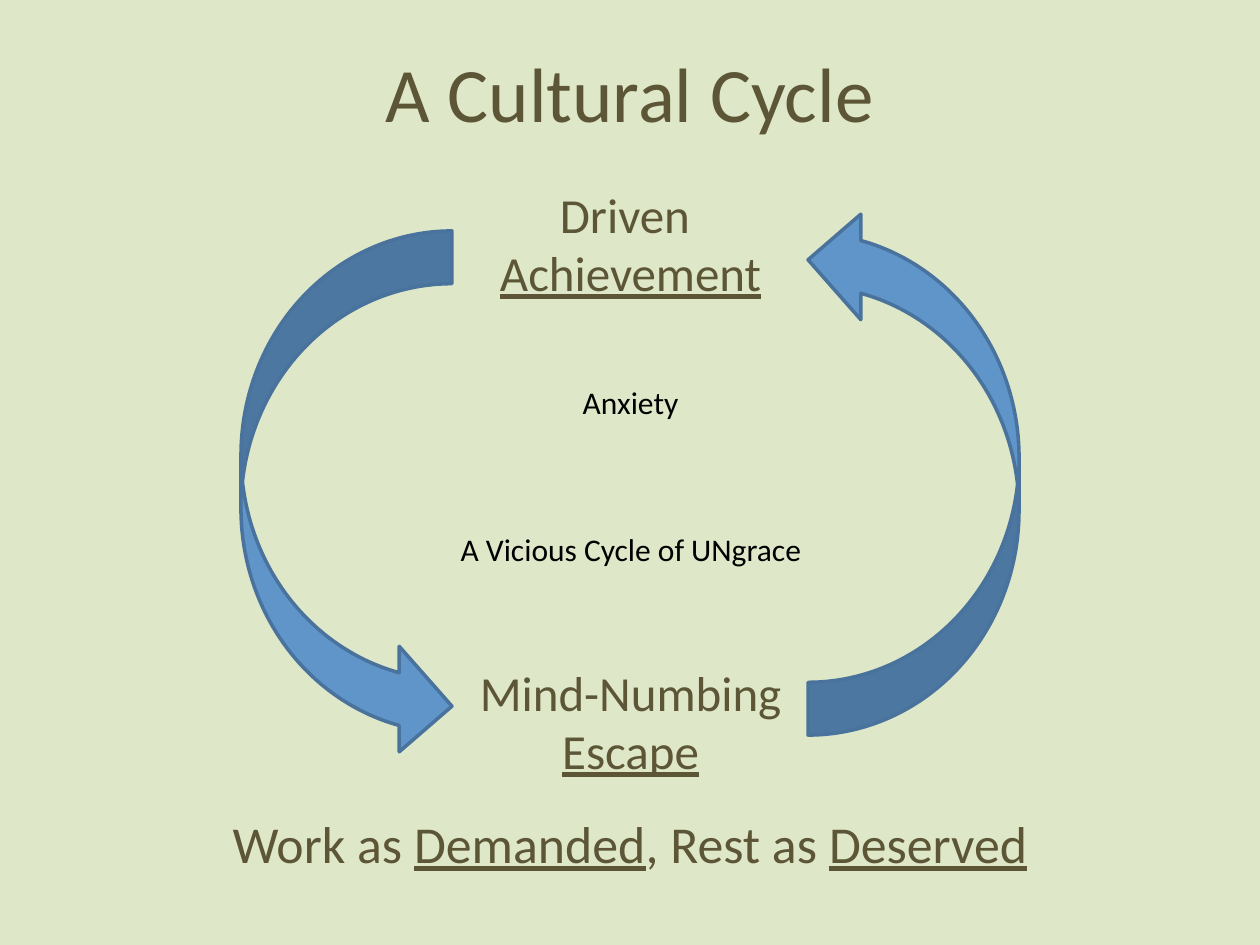
from pptx import Presentation
from pptx.dml.color import RGBColor
from pptx.enum.shapes import MSO_SHAPE as Shape
from pptx.enum.text import MSO_ANCHOR as Anchor, MSO_AUTO_SIZE as AutoSize, PP_ALIGN as Align
from pptx.util import Emu, Pt

COLORS = {"background": "DEE8C8", "brown": "5C5637", "black": "000000",
          "arrow": "6095C9", "outline": "49729C"}


def px(length):
    return Emu(round(length * 914400 / 126))


def write(shape, box, paragraphs, size, color, anchor=Anchor.TOP):
    """Place a shape and fill it; each run is a (text, underlined) pair."""
    shape.left, shape.top, shape.width, shape.height = map(px, box)
    frame = shape.text_frame
    frame.word_wrap = True
    frame.auto_size = AutoSize.NONE
    frame.vertical_anchor = anchor
    frame.margin_left = frame.margin_right = px(5)
    frame.margin_top = frame.margin_bottom = px(5)
    for index, runs in enumerate(paragraphs):
        paragraph = frame.add_paragraph() if index else frame.paragraphs[0]
        paragraph.alignment = Align.CENTER
        for text, underlined in runs:
            run = paragraph.add_run()
            run.text = text
            run.font.name = "Calibri"
            run.font.size = Pt(size)
            run.font.underline = underlined
            run.font.color.rgb = RGBColor.from_string(COLORS[color])


presentation = Presentation()
presentation.slide_width, presentation.slide_height = px(1260), px(945)
slide = presentation.slides.add_slide(presentation.slide_layouts[0])
slide.background.fill.solid()
slide.background.fill.fore_color.rgb = RGBColor.from_string(COLORS["background"])

# Title and closing line
title, subtitle = slide.placeholders
write(title, (95, -10, 1070, 203), [[("A Cultural Cycle", False)]], 44, "brown", Anchor.MIDDLE)
write(subtitle, (189, 819, 882, 68),
      [[("Work as ", False), ("Demanded", True), (", Rest as ", False), ("Deserved", True)]],
      29.6, "brown")
closing = subtitle.text_frame.paragraphs[0]
closing.line_spacing = 0.8
closing.space_before = Pt(7)

# Two arrows of the cycle, the second turned half round
for left, top, rotation in ((241, 231, 0), (808, 207, 180)):
    arrow = slide.shapes.add_shape(Shape.CURVED_RIGHT_ARROW, px(left), px(top), px(211), px(528))
    arrow.rotation = rotation
    arrow.shadow.inherit = False
    arrow.fill.solid()
    arrow.fill.fore_color.rgb = RGBColor.from_string(COLORS["arrow"])
    arrow.line.color.rgb = RGBColor.from_string(COLORS["outline"])
    arrow.line.width = Pt(2)

# Stages of the cycle and the labels inside it
labels = [
    ((451, 179, 359, 134), [[("Driven ", False)], [("Achievement", True)]], 28, "brown"),
    ((451, 657, 359, 134), [[("Mind-Numbing ", False), ("Escape", True)]], 28, "brown"),
    ((451, 378, 359, 105), [[("Anxiety", False)]], 18, "black"),
    ((305, 525, 652, 62), [[("A Vicious Cycle of UNgrace", False)]], 18, "black"),
]
for box, paragraphs, size, color in labels:
    textbox = slide.shapes.add_textbox(*map(px, box))
    write(textbox, box, paragraphs, size, color)

presentation.save("out.pptx")
